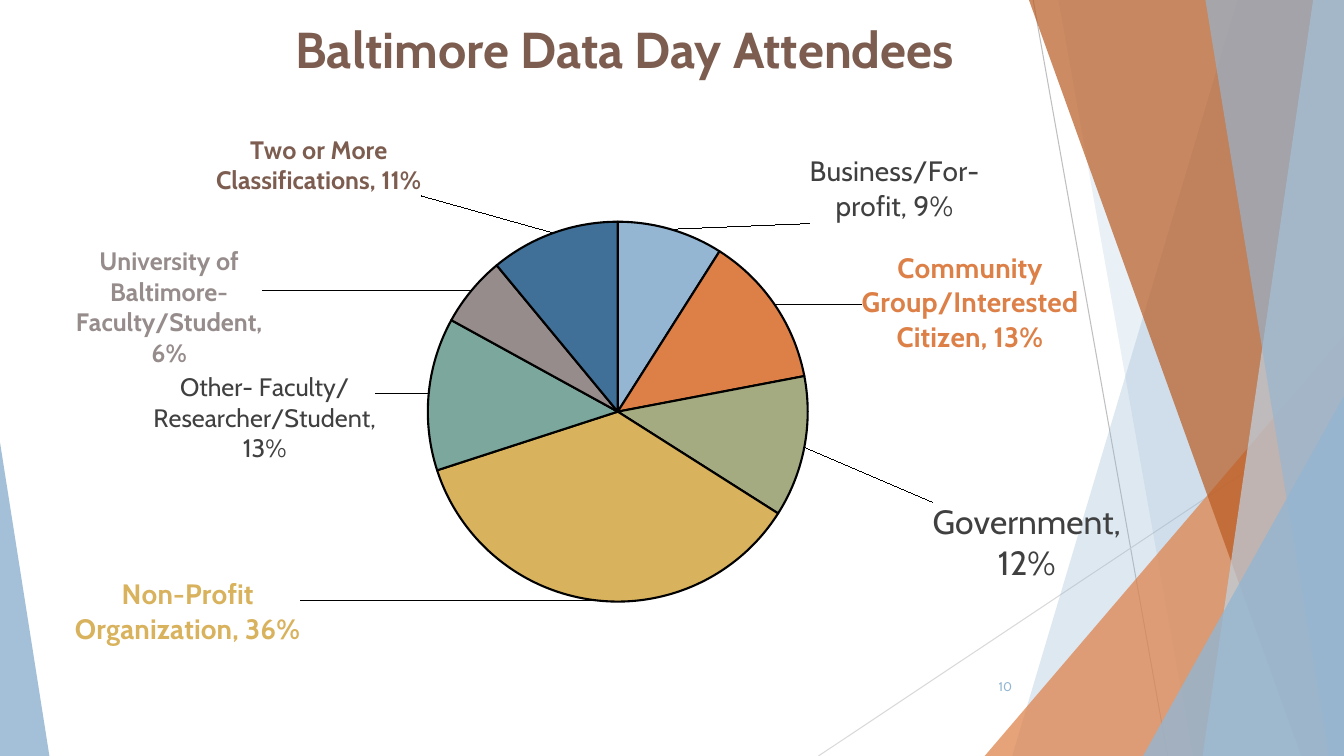
"""Build the Baltimore Data Day attendees slide."""
from lxml import etree
from pptx import Presentation
from pptx.chart.data import CategoryChartData
from pptx.dml.color import RGBColor
from pptx.enum.chart import XL_CHART_TYPE, XL_LABEL_POSITION
from pptx.enum.shapes import MSO_CONNECTOR, MSO_SHAPE
from pptx.enum.text import MSO_ANCHOR, PP_ALIGN
from pptx.oxml import parse_xml
from pptx.util import Pt

PIE = XL_CHART_TYPE.PIE
OUT = XL_LABEL_POSITION.OUTSIDE_END
LINE = MSO_CONNECTOR.STRAIGHT
TRI = MSO_SHAPE.ISOSCELES_TRIANGLE
TOP, MID = MSO_ANCHOR.TOP, MSO_ANCHOR.MIDDLE
LEFT, RIGHT = PP_ALIGN.LEFT, PP_ALIGN.RIGHT

FONT = "Cabin"
WIDE, HIGH = 960, 540
HUES = {
    "sky": "94B6D2", "orange": "DD8047", "sage": "A5AB81", "gold": "D8B25C",
    "teal": "7BA79D", "taupe": "968C8C", "navy": "407097", "rust": "B95B22",
    "pale": "BFD3E4", "brown": "7C5D50", "text": "404040", "black": "000000",
    "gray": "BFBFBF", "light": "D9D9D9",
}
TITLE = "Baltimore Data Day Attendees"
PAGE = "10"

SLICES = [
    ("Business/For-profit", 0.09, "sky", "text", 20, False, (98, 0), 124, 2),
    ("Community Group/Interested Citizen", 0.13, "orange", "orange", 20, True,
     (58.5, 38), 158, 3),
    ("Government", 0.12, "sage", "text", 24, False, (87.5, 38.5), 138, 2),
    ("Non-Profit Organization", 0.36, "gold", "gold", 20, True,
     (-209, -20.5), 120, 3),
    ("Other- Faculty/Researcher/Student", 0.13, "teal", "text", 18, False,
     (-33.5, 50.5), 104, 4),
    ("University of Baltimore- Faculty/Student", 0.06, "taupe", "taupe", 18,
     True, (-146, 58.5), 136, 4),
    ("Two or More Classifications", 0.11, "navy", "brown", 18, True,
     (-93, -22.5), 150, 2),
]
CHART = (43.9, 91.4, 812.9, 425.5)
DISC = (305.6, 158.4, 271.4, 271.4)

RAYS = [((738, 0), (834, 540), "gray"), ((960, 290), (584.6, 540), "light")]
BANDS = [
    ("band", (884, 723), "sky", 30),
    ("band", (756, 852), "sky", 20),
    ("wedge", (703.4, 239.8, 256.6, 1), "orange", 72),
    ("band", (735, 929.5), "rust", 70),
    ("band", (938, 859), "pale", 70),
    ("band", (861, 949), "sky", 65),
    ("wedge", (816.5, 283, 143.5, 1), "sky", 80),
    ("wedge", (0, 316, 35.3, 0), "sky", 85),
]

C = "http://schemas.openxmlformats.org/drawingml/2006/chart"
C15 = "http://schemas.microsoft.com/office/drawing/2012/chart"
EXT = "{CE6537A1-D6FC-4f65-9D91-7224C49458BB}"


def rgb(name):
    return RGBColor.from_string(HUES[name])


def write(frame, text, hue, size, bold=False, align=None):
    para = frame.paragraphs[0]
    if align is not None:
        para.alignment = align
    run = para.add_run()
    run.text = text
    font = run.font
    font.name, font.size, font.bold = FONT, Pt(size), bold
    font.color.rgb = rgb(hue)


def draw_ray(slide, start, end, hue):
    ray = slide.shapes.add_connector(LINE, *map(Pt, start + end))
    ray.line.color.rgb = rgb(hue)
    ray.line.width = Pt(0.75)
    spot = ray._element.spPr
    edge = spot.xpath("./a:ln")[0]
    etree.SubElement(spot, edge.tag.replace("}ln", "}effectLst"))


def draw_band(slide, kind, place, hue, alpha):
    if kind == "band":
        top, foot = place
        pen = slide.shapes.build_freeform(Pt(top), 0)
        rest = [(WIDE, 0), (WIDE, HIGH), (foot, HIGH)]
        pen.add_line_segments([(Pt(x), Pt(y)) for x, y in rest], close=True)
        shape = pen.convert_to_shape()
    else:
        x, y, width, apex = place
        shape = slide.shapes.add_shape(TRI, *map(Pt, (x, y, width, HIGH - y)))
        shape.adjustments[0] = apex
    shape.shadow.inherit = False
    shape.fill.solid()
    shape.fill.fore_color.rgb = rgb(hue)
    shape.line.fill.background()
    tint = shape._element.spPr.xpath("./a:solidFill/a:srgbClr")[0]
    etree.SubElement(tint, tint.tag.replace("srgbClr", "alpha"), val=str(alpha * 1000))


def layout(parts, tag="c:layout"):
    body = "".join(f'<c:{key} val="{val}"/>' for key, val in parts)
    return (f'<{tag} xmlns:c="{C}" xmlns:c15="{C15}"><c:manualLayout>{body}'
            f"</c:manualLayout></{tag}>")


def set_label(point, text, hue, size, bold, shift, width, lines):
    label = point.data_label
    frame = label.text_frame
    frame.word_wrap = True
    write(frame, text, hue, size, bold)
    label.position = OUT
    node = label._dLbl
    node.xpath("./c:showCatName")[0].set("val", "1")
    dx, dy = shift[0] / CHART[2], shift[1] / CHART[3]
    node.insert(1, parse_xml(layout([("x", round(dx, 4)), ("y", round(dy, 4))])))
    w, h = width / CHART[2], lines * size * 1.22 / CHART[3]
    box = layout([("w", round(w, 4)), ("h", round(h, 4))], "c15:layout")
    node.append(parse_xml(f'<c:extLst xmlns:c="{C}"><c:ext uri="{EXT}">'
                          f"{box}</c:ext></c:extLst>"))


def draw_pie(slide):
    data = CategoryChartData(number_format="0%")
    data.categories = [row[0] for row in SLICES]
    data.add_series("Series 1", [row[1] for row in SLICES])
    chart = slide.shapes.add_chart(PIE, *map(Pt, CHART), data).chart
    chart.has_title = chart.has_legend = False
    chart.font.name, chart.font.size = FONT, Pt(14)
    chart.font.color.rgb = rgb("black")
    plot = chart.plots[0]
    plot.vary_by_categories = True
    series = plot.series[0]
    labels = series.data_labels
    labels.show_value = labels.show_category_name = True
    labels.number_format, labels.number_format_is_linked = "0%", False
    labels.position = OUT
    labels.font.name, labels.font.size = FONT, Pt(18)
    labels.font.color.rgb = rgb("text")
    for i, (name, value, fill, *style) in enumerate(SLICES):
        point = series.points[i]
        point.format.fill.solid()
        point.format.fill.fore_color.rgb = rgb(fill)
        point.format.line.color.rgb = rgb("black")
        point.format.line.width = Pt(1.5)
        set_label(point, f"{name}, {value:.0%}", *style)
    area = chart._chartSpace.xpath(".//c:plotArea")[0]
    for old in area.xpath("./c:layout"):
        area.remove(old)
    x, y, w, h = DISC
    left, top, wide, high = CHART
    rates = ((x - left) / wide, (y - top) / high, w / wide, h / high)
    parts = [("layoutTarget", "inner"), ("xMode", "edge"), ("yMode", "edge")]
    parts += [(key, round(rate, 4)) for key, rate in zip("xywh", rates)]
    area.insert(0, parse_xml(layout(parts)))


def main():
    deck = Presentation()
    deck.slide_width, deck.slide_height = Pt(WIDE), Pt(HIGH)
    slide = deck.slides.add_slide(deck.slide_layouts[5])
    for ray in RAYS:
        draw_ray(slide, *ray)
    for band in BANDS:
        draw_band(slide, *band)
    page = slide.shapes.add_textbox(*map(Pt, (676, 476, 54, 28.8))).text_frame
    page.word_wrap, page.vertical_anchor = True, MID
    write(page, PAGE, "sky", 9, align=RIGHT)
    draw_pie(slide)
    title = slide.shapes.title
    title.left, title.top, title.width, title.height = map(Pt, (203.8, 9.4, 526.3, 68.4))
    title.text_frame.word_wrap = True
    title.text_frame.vertical_anchor = TOP
    write(title.text_frame, TITLE, "brown", 36, True, LEFT)
    deck.save("out.pptx")


if __name__ == "__main__":
    main()
